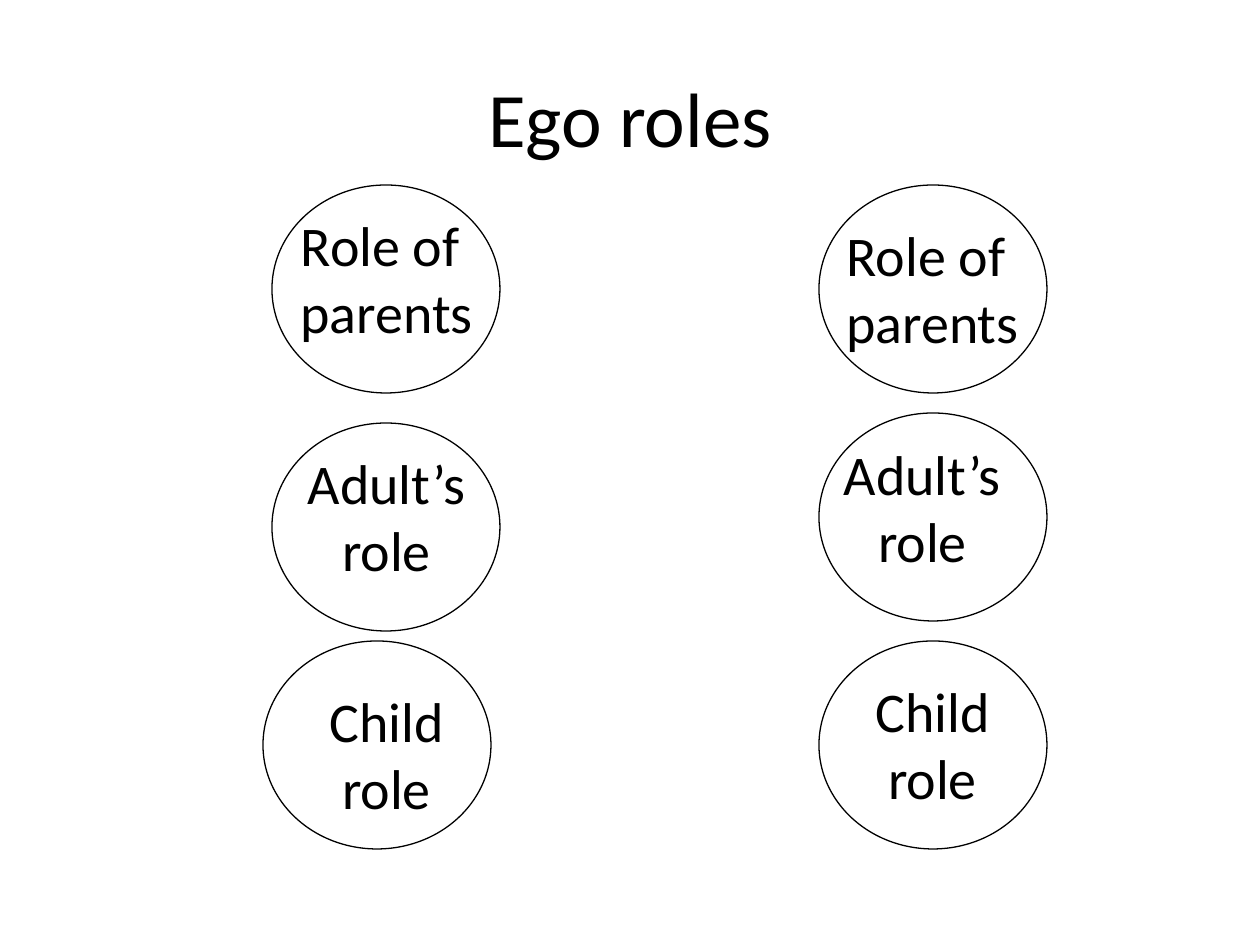
"""Build the slide of ego roles as two columns of labelled circles."""
from dataclasses import dataclass

from pptx import Presentation
from pptx.dml.color import RGBColor
from pptx.enum.shapes import MSO_SHAPE
from pptx.enum.text import MSO_ANCHOR, MSO_AUTO_SIZE, PP_ALIGN
from pptx.util import Emu, Pt

OVAL = MSO_SHAPE.OVAL
MIDDLE = MSO_ANCHOR.MIDDLE
CENTER = PP_ALIGN.CENTER
GROW = MSO_AUTO_SIZE.SHAPE_TO_FIT_TEXT
SCALE = 914400 // 126


@dataclass(frozen=True)
class Theme:
    ink: RGBColor = RGBColor(0, 0, 0)
    font: str = "Calibri"
    head: int = 44
    body: int = 32
    line: float = 0.75


class Deck:
    def __init__(self, theme):
        self.theme = theme
        self.show = Presentation()
        self.show.slide_width = self.px(1260)
        self.show.slide_height = self.px(945)
        self.slide = self.show.slides.add_slide(self.show.slide_layouts[5])

    def px(self, size):
        return Emu(size * SCALE)

    def style(self, frame, text, size):
        frame.word_wrap = True
        frame.text = text
        for para in frame.paragraphs:
            para.alignment = CENTER
            for run in para.runs:
                run.font.name = self.theme.font
                run.font.size = Pt(size)
                run.font.color.rgb = self.theme.ink

    def title(self, text, x, y, w, h):
        shape = self.slide.shapes.title
        shape.left, shape.top, shape.width, shape.height = map(self.px, (x, y, w, h))
        self.style(shape.text_frame, text, self.theme.head)
        shape.text_frame.vertical_anchor = MIDDLE

    def circle(self, x, y, w=228, h=208):
        shape = self.slide.shapes.add_shape(OVAL, *map(self.px, (x, y, w, h)))
        shape.shadow.inherit = False
        shape.fill.background()
        shape.line.color.rgb = self.theme.ink
        shape.line.width = Pt(self.theme.line)

    def label(self, text, x, y, w=307, h=149):
        box = self.slide.shapes.add_textbox(*map(self.px, (x, y, w, h)))
        self.style(box.text_frame, text, self.theme.body)
        box.text_frame.auto_size = GROW


def main():
    deck = Deck(Theme())
    deck.title("Ego roles", 63, 38, 1134, 157)
    child, adult, parent = "Child\nrole", "Adult’s\nrole", "Role of \nparents"
    roles = [
        (child, (819, 641), (779, 670)),
        (adult, (819, 413), (769, 433)),
        (parent, (819, 185), (779, 214)),
        (child, (263, 641), (233, 680)),
        (adult, (272, 423), (233, 442)),
        (parent, (272, 185), (233, 204)),
    ]
    for text, ring, spot in roles:
        deck.circle(*ring)
        deck.label(text, *spot)
    deck.show.save("out.pptx")


if __name__ == "__main__":
    main()
